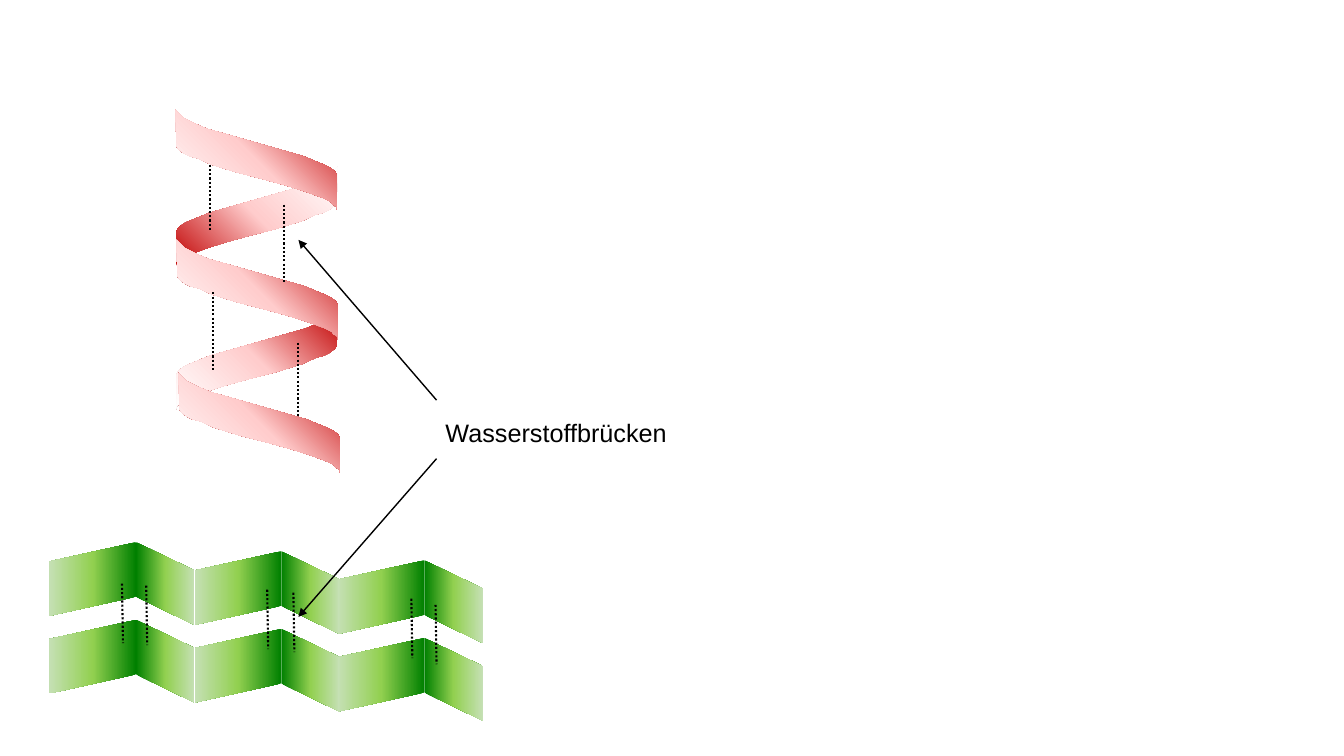
from copy import deepcopy
from dataclasses import dataclass

from pptx import Presentation
from pptx.dml.color import RGBColor
from pptx.enum.dml import MSO_LINE
from pptx.enum.shapes import MSO_CONNECTOR
from pptx.enum.text import MSO_AUTO_SIZE
from pptx.oxml.ns import qn
from pptx.slide import Slide
from pptx.util import Inches, Pt

DOTTED = MSO_LINE.ROUND_DOT
STRAIGHT = MSO_CONNECTOR.STRAIGHT
FIT = MSO_AUTO_SIZE.SHAPE_TO_FIT_TEXT

COLORS = {
    "ink": "000000",
    "leaf": "008000", "lime": "92D050", "mint": "C5E0B4",
    "red": "C00000", "rose": "FFCCCC", "white": "FFFFFF",
}
GREEN = ("leaf", "lime", "mint")
REDS = ("red", "rose", "white")

# Outline of one helix turn, measured from its top left corner
TURN_WIDE = 1.6
TURN = [
    (0, 0), (0.01, 0.36), (0.03, 0.39), (0.08, 0.43), (0.14, 0.46),
    (0.22, 0.48), (0.35, 0.54), (0.61, 0.62), (0.88, 0.69), (1.1, 0.75),
    (1.29, 0.81), (1.4, 0.85), (1.48, 0.88), (1.54, 0.91), (1.56, 0.94),
    (1.59, 0.95), (1.6, 0.98), (1.6, 0.99), (1.6, 0.65), (1.59, 0.62),
    (1.57, 0.6), (1.53, 0.57), (1.49, 0.55), (1.44, 0.53), (1.27, 0.46),
    (0.5, 0.24), (0.32, 0.19), (0.2, 0.14), (0.08, 0.08),
]

# Outlines of the two halves of one sheet pleat
RISE = [(0, 0.19), (0.86, 0), (0.86, 0.54), (0, 0.73)]
FALL = [(0.86, 0), (0.86, 0.54), (1.44, 0.82), (1.44, 0.28)]


@dataclass
class Coil:
    left: float
    top: float
    angle: int = 135
    back: bool = False


@dataclass
class Bond:
    left: float
    top: float
    tall: float
    lean: float = 0


@dataclass
class Arrow:
    start: tuple[float, float]
    end: tuple[float, float]


BACK_COILS = [Coil(1.75, 1.65, 315, True), Coil(1.75, 3.07, 135, True),
              Coil(1.75, 2.38)]
FRONT_COILS = [Coil(1.74, 1.09), Coil(1.77, 3.7)]
COIL_BONDS = [Bond(x, y, 0.79) for x, y in
              [(2.08, 1.51), (2.82, 2.03), (2.11, 2.9), (2.96, 3.4)]]
SHEET_BONDS = [Bond(x, y, 0.59, 0.01) for x, y in
               [(1.21, 5.79), (1.45, 5.81), (2.65, 5.85),
                (2.91, 5.88), (4.08, 5.94), (4.32, 6)]]
PLEATS = [(0.49, 5.38), (1.93, 5.47), (3.35, 5.56)]
ROW_GAP = 0.77
ARROWS = [Arrow((4.33, 3.97), (2.96, 2.38)),
          Arrow((4.33, 4.55), (2.96, 6.12))]


def color(name: str) -> RGBColor:
    return RGBColor.from_string(COLORS[name])


def add_patch(slide: Slide, left: float, top: float,
              points: list[tuple[float, float]],
              names: tuple[str, str, str], angle: int) -> None:
    """Draw a closed outline with three gradient stops, angle clockwise."""
    spots = [(Inches(left + x), Inches(top + y)) for x, y in points]
    pen = slide.shapes.build_freeform(*spots[0], scale=1.0)
    pen.add_line_segments(spots[1:], close=True)
    shape = pen.convert_to_shape()
    shape.shadow.inherit = False
    shape.line.fill.background()
    fill = shape.fill
    fill.gradient()
    fill.gradient_angle = (360 - angle) % 360
    stops = shape._element.spPr.find(".//" + qn("a:gsLst"))
    stops.append(deepcopy(stops[0]))
    for stop, name, place in zip(fill.gradient_stops, names, (0, 0.5, 1)):
        stop.color.rgb = color(name)
        stop.position = place


def add_line(slide: Slide, start: tuple[float, float],
             end: tuple[float, float], width: float):
    line = slide.shapes.add_connector(
        STRAIGHT, *[Inches(v) for v in (*start, *end)])
    line.line.color.rgb = color("ink")
    line.line.width = Pt(width)
    props = line._element.spPr
    props.append(props.makeelement(qn("a:effectLst"), {}))
    return line


def add_bond(slide: Slide, bond: Bond) -> None:
    end = (bond.left + bond.lean, bond.top + bond.tall)
    line = add_line(slide, (bond.left, bond.top), end, 1.5)
    line.line.dash_style = DOTTED


def add_arrow(slide: Slide, arrow: Arrow) -> None:
    line = add_line(slide, arrow.start, arrow.end, 1)
    stroke = line._element.spPr.find(qn("a:ln"))
    stroke.append(stroke.makeelement(qn("a:tailEnd"), {"type": "triangle"}))


def add_coil(slide: Slide, coil: Coil) -> None:
    points = [(TURN_WIDE - x, y) for x, y in TURN] if coil.back else TURN
    add_patch(slide, coil.left, coil.top, points, REDS, coil.angle)


def add_label(slide: Slide) -> None:
    box = slide.shapes.add_textbox(
        Inches(4.32), Inches(4.09), Inches(2.42), Inches(0.4))
    frame = box.text_frame
    frame.word_wrap = False
    frame.auto_size = FIT
    frame.text = "Wasserstoffbrücken"
    font = frame.paragraphs[0].runs[0].font
    font.name = "Arial"
    font.size = Pt(18)
    font.color.rgb = color("ink")


def main() -> None:
    deck = Presentation()
    deck.slide_width, deck.slide_height = Inches(13.33), Inches(7.5)
    slide = deck.slides.add_slide(deck.slide_layouts[6])

    # Pleated sheet: two strands joined by bonds
    for row in range(2):
        for left, top in PLEATS:
            for points, angle in ((RISE, 180), (FALL, 0)):
                add_patch(slide, left, top + row * ROW_GAP,
                          points, GREEN, angle)
    for bond in SHEET_BONDS:
        add_bond(slide, bond)

    # Label with its two arrows
    for arrow in ARROWS:
        add_arrow(slide, arrow)
    add_label(slide)

    # Helix: bonds lie between the rear and front turns
    for coil in BACK_COILS:
        add_coil(slide, coil)
    for bond in COIL_BONDS:
        add_bond(slide, bond)
    for coil in FRONT_COILS:
        add_coil(slide, coil)

    deck.save("out.pptx")


if __name__ == "__main__":
    main()
